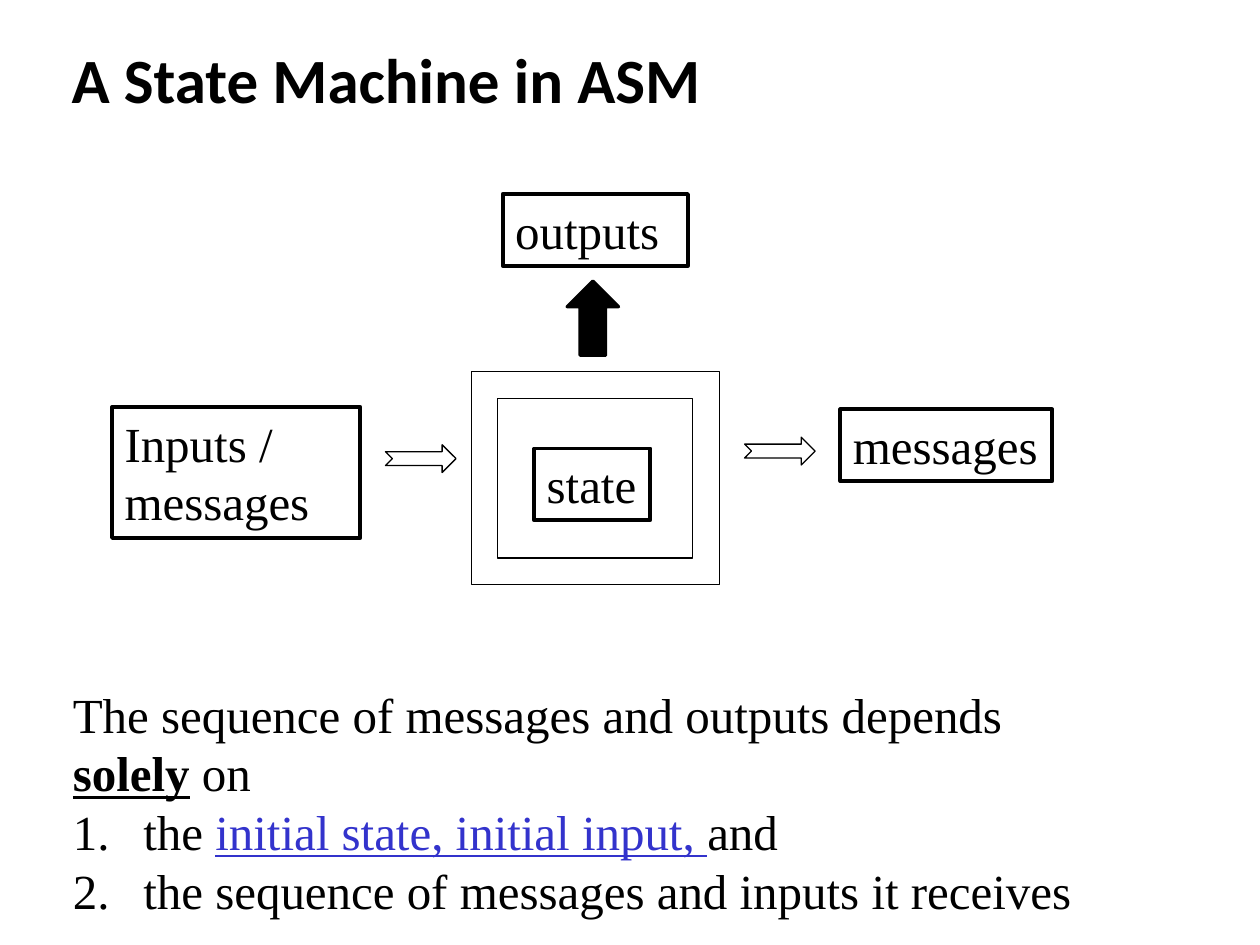
"""Build the slide that shows a state machine with its inputs and outputs."""
from dataclasses import dataclass

import pptx
import pptx.dml.color
import pptx.enum.shapes
import pptx.enum.text
import pptx.oxml.ns
import pptx.util
from lxml import etree

Inches = pptx.util.Inches
Kind = pptx.enum.shapes.MSO_SHAPE
Anchor = pptx.enum.text.MSO_ANCHOR
Align = pptx.enum.text.PP_ALIGN


@dataclass(frozen=True)
class Theme:
    ink: str = "000000"
    link: str = "3333CC"
    head: str = "Calibri"
    body: str = "Times New Roman"
    big: float = 36
    size: float = 28
    thin: float = 0.75
    mid: float = 1.75
    bold: float = 2.25


THEME = Theme()

TITLE = [[("A State Machine in ASM", {"bold": True})]]

SHAPES = [
    (Kind.FRAME, (3.74, 2.95, 1.97, 1.69), THEME.thin, None),
    (Kind.NOTCHED_RIGHT_ARROW, (3.06, 3.53, 0.56, 0.22), THEME.thin, None),
    (Kind.UP_ARROW, (4.5, 2.23, 0.41, 0.59), THEME.mid, THEME.ink),
    (Kind.NOTCHED_RIGHT_ARROW, (5.91, 3.47, 0.56, 0.22), THEME.thin, None),
]

BOXES = [
    (["Inputs /", "messages"], (0.89, 3.23, 1.97, 1.04), True),
    (["messages"], (6.67, 3.25, 1.68, 0.57), True),
    (["outputs"], (3.99, 1.54, 1.47, 0.57), True),
    (["state"], (4.24, 3.56, 0.92, 0.57), False),
]

LEAD = [
    ("The sequence of messages and outputs depends ", {}),
    ("solely", {"bold": True, "line": True}),
    (" on", {}),
]
ITEMS = [
    [
        ("the ", {}),
        ("initial state, initial input, ", {"color": THEME.link, "line": True}),
        ("and", {}),
    ],
    [("the sequence of messages and inputs it receives", {})],
]


def place(at):
    return [Inches(part) for part in at]


def paint(color):
    return pptx.dml.color.RGBColor.from_string(color)


def number(para):
    props = para._p.get_or_add_pPr()
    props.set("marL", str(Inches(0.56)))
    props.set("indent", str(-Inches(0.56)))
    mark = etree.SubElement(props, pptx.oxml.ns.qn("a:buAutoNum"))
    mark.set("type", "arabicPeriod")


def write(frame, paras, font=THEME.body, size=THEME.size, anchor=Anchor.TOP,
          wrap=True, first=None):
    frame.word_wrap = wrap
    frame.vertical_anchor = anchor
    for spot, runs in enumerate(paras):
        para = frame.paragraphs[0] if spot == 0 else frame.add_paragraph()
        para.alignment = Align.LEFT
        if first is not None and spot >= first:
            number(para)
        para.font.size = pptx.util.Pt(size)
        para.font.name = font
        for text, style in runs:
            run = para.add_run()
            run.text = text
            run.font.name = font
            run.font.size = pptx.util.Pt(size)
            run.font.bold = style.get("bold", False)
            run.font.underline = style.get("line", False)
            run.font.color.rgb = paint(style.get("color", THEME.ink))


def draw(slide, kind, at, width, fill=None):
    shape = slide.shapes.add_shape(kind, *place(at))
    shape.shadow.inherit = False
    if fill:
        shape.fill.solid()
        shape.fill.fore_color.rgb = paint(fill)
    else:
        shape.fill.background()
    shape.line.color.rgb = paint(THEME.ink)
    shape.line.width = pptx.util.Pt(width)
    return shape


def main():
    deck = pptx.Presentation()
    deck.slide_width, deck.slide_height = Inches(10), Inches(7.5)
    slide = deck.slides.add_slide(deck.slide_layouts[6])

    title = slide.shapes.add_textbox(*place((0.47, 0.25, 9.19, 0.75)))
    write(title.text_frame, TITLE, font=THEME.head, size=THEME.big,
          anchor=Anchor.MIDDLE)
    for kind, at, width, fill in SHAPES:
        draw(slide, kind, at, width, fill)
    for lines, at, wrap in BOXES:
        box = draw(slide, Kind.RECTANGLE, at, THEME.bold)
        write(box.text_frame, [[(line, {})] for line in lines], wrap=wrap)
    body = slide.shapes.add_textbox(*place((0.48, 5.38, 8.24, 1.99)))
    write(body.text_frame, [LEAD, *ITEMS], first=1)

    deck.save("out.pptx")


if __name__ == "__main__":
    main()
